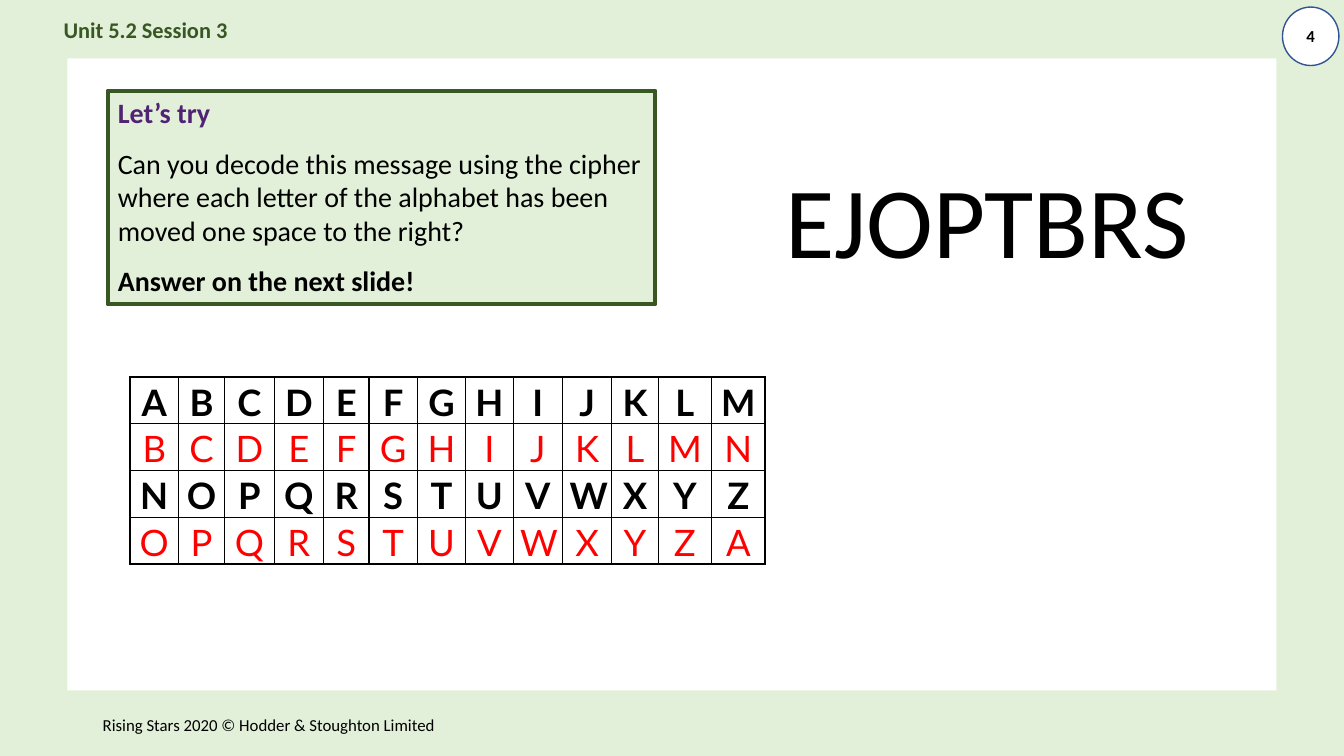
import lxml.etree
import pptx
import pptx.dml.color
import pptx.enum.shapes
import pptx.enum.text
import pptx.oxml.ns
import pptx.util

Inches = pptx.util.Inches
Pt = pptx.util.Pt
SHAPE = pptx.enum.shapes.MSO_SHAPE
ALIGN = pptx.enum.text.PP_ALIGN
ANCHOR = pptx.enum.text.MSO_ANCHOR

SLIDE_W, SLIDE_H = 13.33, 7.5
PALE_GREEN, DARK_GREEN, PURPLE = "E2F0D9", "385723", "512373"
BLACK, WHITE, RED, BLUE = "000000", "FFFFFF", "FF0000", "325491"
ALPHABET = "ABCDEFGHIJKLMNOPQRSTUVWXYZ"
LETTER_WIDTHS = [0.48, 0.46, 0.49, 0.49, 0.45, 0.48, 0.48,
                 0.47, 0.49, 0.49, 0.46, 0.53, 0.53]


def rgb(color):
    return pptx.dml.color.RGBColor.from_string(color)


def write(frame, text, size=20, color=BLACK, bold=False, font="Calibri",
          align=ALIGN.LEFT, before=0, spacing=None):
    """Fill the first paragraph of the frame, or add one after it."""
    paragraph = frame.paragraphs[0]
    if paragraph.runs:
        paragraph = frame.add_paragraph()
        paragraph.space_before = Pt(before)
    paragraph.alignment = align
    if spacing:
        paragraph.line_spacing = spacing
    run = paragraph.add_run()
    run.text = text
    run.font.name = font
    run.font.size = Pt(size)
    run.font.bold = bold
    run.font.color.rgb = rgb(color)


def add_panel(slide, box, kind=SHAPE.RECTANGLE, fill=PALE_GREEN, line=None, width=1):
    panel = slide.shapes.add_shape(kind, *map(Inches, box))
    panel.shadow.inherit = False
    panel.fill.solid()
    panel.fill.fore_color.rgb = rgb(fill)
    if line:
        panel.line.color.rgb = rgb(line)
        panel.line.width = Pt(width)
    else:
        panel.line.fill.background()
    panel.text_frame.word_wrap = True
    return panel.text_frame


def add_label(slide, box, text, anchor=ANCHOR.TOP, **text_format):
    frame = slide.shapes.add_textbox(*map(Inches, box)).text_frame
    frame.word_wrap = True
    frame.vertical_anchor = anchor
    write(frame, text, **text_format)


def add_frame(slide, left, top, right, bottom):
    """Green bands around the slide, with the given thicknesses."""
    for band in ((0, SLIDE_H - bottom, SLIDE_W, bottom),
                 (SLIDE_W - right, 0, right, SLIDE_H),
                 (0, 0, SLIDE_W, top),
                 (0, 0, left, SLIDE_H)):
        add_panel(slide, band)


def add_page_number(slide, box, number):
    badge = add_panel(slide, box, SHAPE.FLOWCHART_CONNECTOR, WHITE, BLUE)
    badge.margin_left = badge.margin_right = 0
    badge.vertical_anchor = ANCHOR.MIDDLE
    write(badge, number, size=12, bold=True, align=ALIGN.CENTER)


def place_title(slide, box, text):
    title = slide.shapes.title
    title.left, title.top, title.width, title.height = map(Inches, box)
    # Bring the title in front of the bands
    slide.shapes._spTree.append(title._element)
    frame = title.text_frame
    frame.auto_size = pptx.enum.text.MSO_AUTO_SIZE.NONE
    frame.word_wrap = True
    frame.vertical_anchor = ANCHOR.TOP
    write(frame, text, size=16, color=DARK_GREEN, bold=True)


def add_task(slide, box):
    task = add_panel(slide, box, line=DARK_GREEN, width=3)
    task.vertical_anchor = ANCHOR.TOP
    write(task, "Let’s try", color=PURPLE, bold=True)
    write(task, "Can you decode this message using the cipher where each letter "
          "of the alphabet has been moved one space to the right?", before=12)
    write(task, "Answer on the next slide!", bold=True, before=12)


def set_borders(cell, widths):
    """Draw black borders; widths holds left, right, top and bottom in points."""
    properties = cell._tc.get_or_add_tcPr()
    for position, (side, width) in enumerate(zip("LRTB", widths)):
        border = lxml.etree.Element(pptx.oxml.ns.qn("a:ln" + side), w=str(Pt(width)))
        fill = lxml.etree.SubElement(border, pptx.oxml.ns.qn("a:solidFill"))
        lxml.etree.SubElement(fill, pptx.oxml.ns.qn("a:srgbClr"), val=BLACK)
        properties.insert(position, border)


def add_cipher(slide, box):
    """Each half of the alphabet above its letters moved by one."""
    shifted = ALPHABET[1:] + ALPHABET[0]
    half = len(LETTER_WIDTHS)
    rows = [ALPHABET[:half], shifted[:half], ALPHABET[half:], shifted[half:]]
    cipher = slide.shapes.add_table(len(rows), half, *map(Inches, box)).table
    cipher.first_row = cipher.horz_banding = False
    for column, width in zip(cipher.columns, LETTER_WIDTHS):
        column.width = Inches(width)
    for r, letters in enumerate(rows):
        cipher.rows[r].height = Inches(box[3] / len(rows))
        plain = r % 2 == 0
        for c, letter in enumerate(letters):
            cell = cipher.cell(r, c)
            cell.fill.background()
            cell.vertical_anchor = ANCHOR.MIDDLE
            cell.margin_left = cell.margin_right = Inches(0.07)
            cell.margin_top = cell.margin_bottom = 0
            write(cell.text_frame, letter, size=26, font="Lato", bold=plain,
                  color=BLACK if plain else RED, align=ALIGN.CENTER, spacing=1.07)
            heavy_sides = (c == 0, c == half - 1, plain, not plain)
            set_borders(cell, [1.5 if heavy else 1 for heavy in heavy_sides])


def build_session_slide(deck):
    slide = deck.slides.add_slide(deck.slide_layouts[5])
    # Frame, page number and header
    add_frame(slide, left=0.67, top=0.58, right=0.67, bottom=0.65)
    add_page_number(slide, (12.72, 0.07, 0.56, 0.58), "4")
    place_title(slide, (0.53, 0.11, 1.94, 0.37), "Unit 5.2 Session 3")
    # Footer
    add_label(slide, (0.92, 6.99, 5.21, 0.4),
              "Rising Stars 2020 © Hodder & Stoughton Limited",
              anchor=ANCHOR.MIDDLE, size=12)
    # Task, coded message and cipher
    add_task(slide, (1.07, 0.9, 5.43, 2.12))
    add_label(slide, (7.69, 1.52, 4.44, 1.31), "EJOPTBRS", size=72)
    add_cipher(slide, (1.29, 3.74, sum(LETTER_WIDTHS), 1.85))


def main():
    deck = pptx.Presentation()
    deck.slide_width, deck.slide_height = Inches(SLIDE_W), Inches(SLIDE_H)
    build_session_slide(deck)
    deck.save("out.pptx")


if __name__ == "__main__":
    main()
